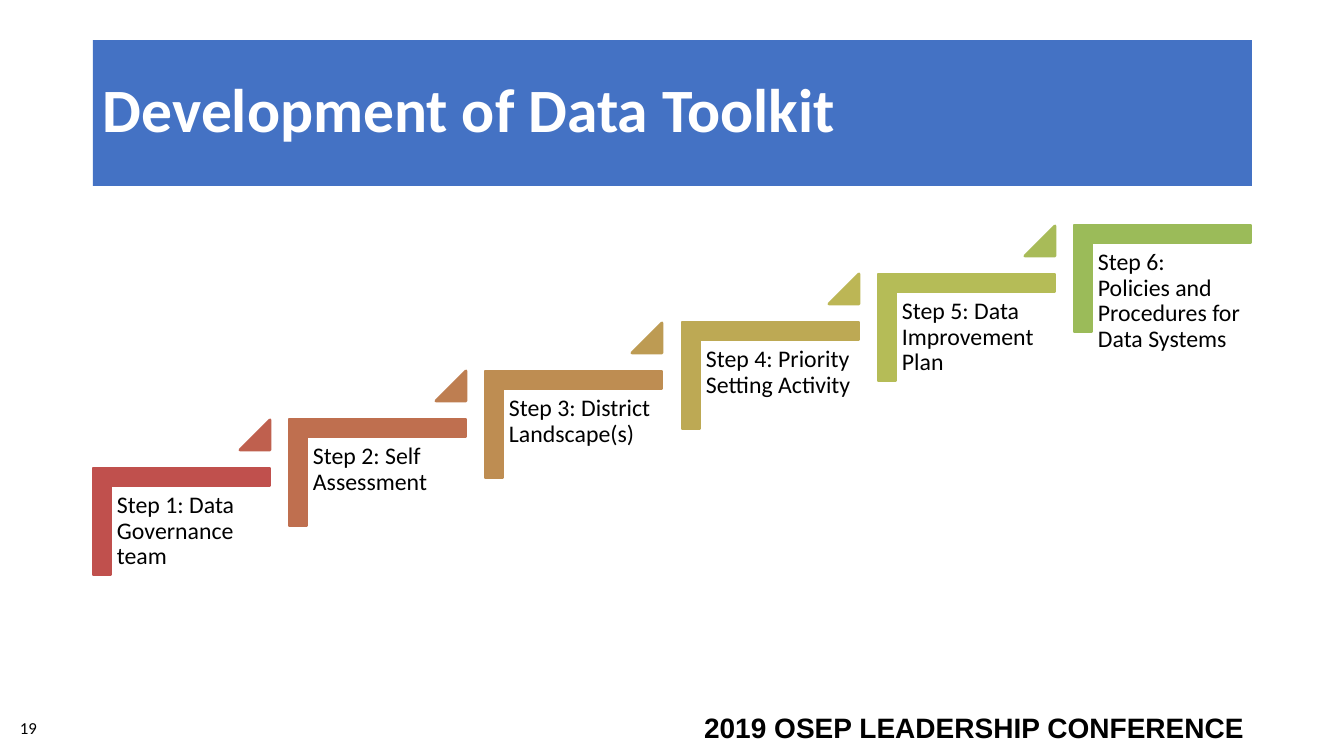
import dataclasses

import pptx
import pptx.dml.color
import pptx.enum.shapes
import pptx.enum.text
import pptx.util

SHAPE = pptx.enum.shapes.MSO_SHAPE
ALIGN = pptx.enum.text.PP_ALIGN
ANCHOR = pptx.enum.text.MSO_ANCHOR


@dataclasses.dataclass(frozen=True)
class Theme:
    body_font: str = "Calibri"
    footer_font: str = "Arial"
    banner: str = "4472C4"
    light: str = "FFFFFF"
    dark: str = "000000"
    corners: tuple = ("C0504D", "BF6F4F", "BE8D52", "BDA954", "B5BC57", "9BBB59")
    triangles: tuple = ("BF604E", "BE7E51", "BD9B53", "BCB655", "A8BB58")
    title_size: int = 44
    footer_size: int = 20
    step_size: int = 17
    number_size: int = 12
    outline: int = 2


def px(length):
    return pptx.util.Emu(round(length * 914400 / 100.8))


def rgb(value):
    return pptx.dml.color.RGBColor.from_string(value)


class SlideBuilder:
    def __init__(self, slide, theme):
        self.slide = slide
        self.theme = theme

    def shape(self, kind, box, fill, adjustments=(), rotation=0, outlined=True):
        shape = self.slide.shapes.add_shape(kind, *map(px, box))
        shape.shadow.inherit = False
        shape.rotation = rotation
        for index, value in enumerate(adjustments):
            shape.adjustments[index] = value
        shape.fill.solid()
        shape.fill.fore_color.rgb = rgb(fill)
        if outlined:
            shape.line.color.rgb = rgb(fill)
            shape.line.width = pptx.util.Pt(self.theme.outline)
        else:
            shape.line.fill.background()
        return shape

    def set_text(self, shape, text, size, color, font=None, bold=False,
                 align=ALIGN.LEFT, anchor=ANCHOR.TOP, spacing=1.0):
        frame = shape.text_frame
        frame.word_wrap = True
        frame.vertical_anchor = anchor
        paragraph = frame.paragraphs[0]
        paragraph.text = text
        paragraph.alignment = align
        paragraph.line_spacing = spacing
        paragraph.font.name = font or self.theme.body_font
        paragraph.font.size = pptx.util.Pt(size)
        paragraph.font.bold = bold
        paragraph.font.color.rgb = rgb(color)

    def text(self, box, text, size, inset=None, **style):
        shape = self.slide.shapes.add_textbox(*map(px, box))
        if inset is not None:
            frame = shape.text_frame
            frame.margin_left = frame.margin_right = px(inset)
            frame.margin_top = frame.margin_bottom = px(inset)
        self.set_text(shape, text, size, self.theme.dark, **style)

    def banner(self, box, text):
        shape = self.shape(SHAPE.RECTANGLE, box, self.theme.banner, outlined=False)
        self.set_text(shape, text, self.theme.title_size, self.theme.light,
                      bold=True, anchor=ANCHOR.MIDDLE, spacing=0.9)

    def step(self, left, top, text, color):
        self.shape(SHAPE.CORNER, (left + 18, top, 107, 177), color, (0.161, 0.161), 90)
        self.text((left, top + 53, 160, 140), text, self.theme.step_size,
                  inset=7, spacing=0.9)

    def triangle(self, left, top, color):
        self.shape(SHAPE.ISOSCELES_TRIANGLE, (left, top, 30, 30), color, (1,))


def main():
    theme = Theme()
    presentation = pptx.Presentation()
    presentation.slide_width = px(1344)
    presentation.slide_height = px(756)
    builder = SlideBuilder(presentation.slides.add_slide(presentation.slide_layouts[6]), theme)

    builder.text((672, 706, 582, 44), "2019 OSEP LEADERSHIP CONFERENCE",
                 theme.footer_size, font=theme.footer_font, bold=True, align=ALIGN.RIGHT)
    builder.banner((93, 40, 1159, 146), "Development of Data Toolkit")
    builder.text((10, 708, 302, 40), "19", theme.number_size, anchor=ANCHOR.MIDDLE)

    steps = (
        "Step 1: Data Governance team",
        "Step 2: Self Assessment",
        "Step 3: District Landscape(s)",
        "Step 4: Priority Setting Activity",
        "Step 5: Data Improvement Plan",
        "Step 6:\vPolicies and Procedures for Data Systems",
    )
    first_left, first_top, run, rise = 110, 433, 981, 243
    gaps = len(steps) - 1
    for index, text in enumerate(steps):
        left = first_left + round(index * run / gaps)
        top = first_top - round(index * rise / gaps)
        builder.step(left, top, text, theme.corners[index])
        if index < gaps:
            builder.triangle(left + 130, top - 13, theme.triangles[index])

    presentation.save("out.pptx")


if __name__ == "__main__":
    main()
